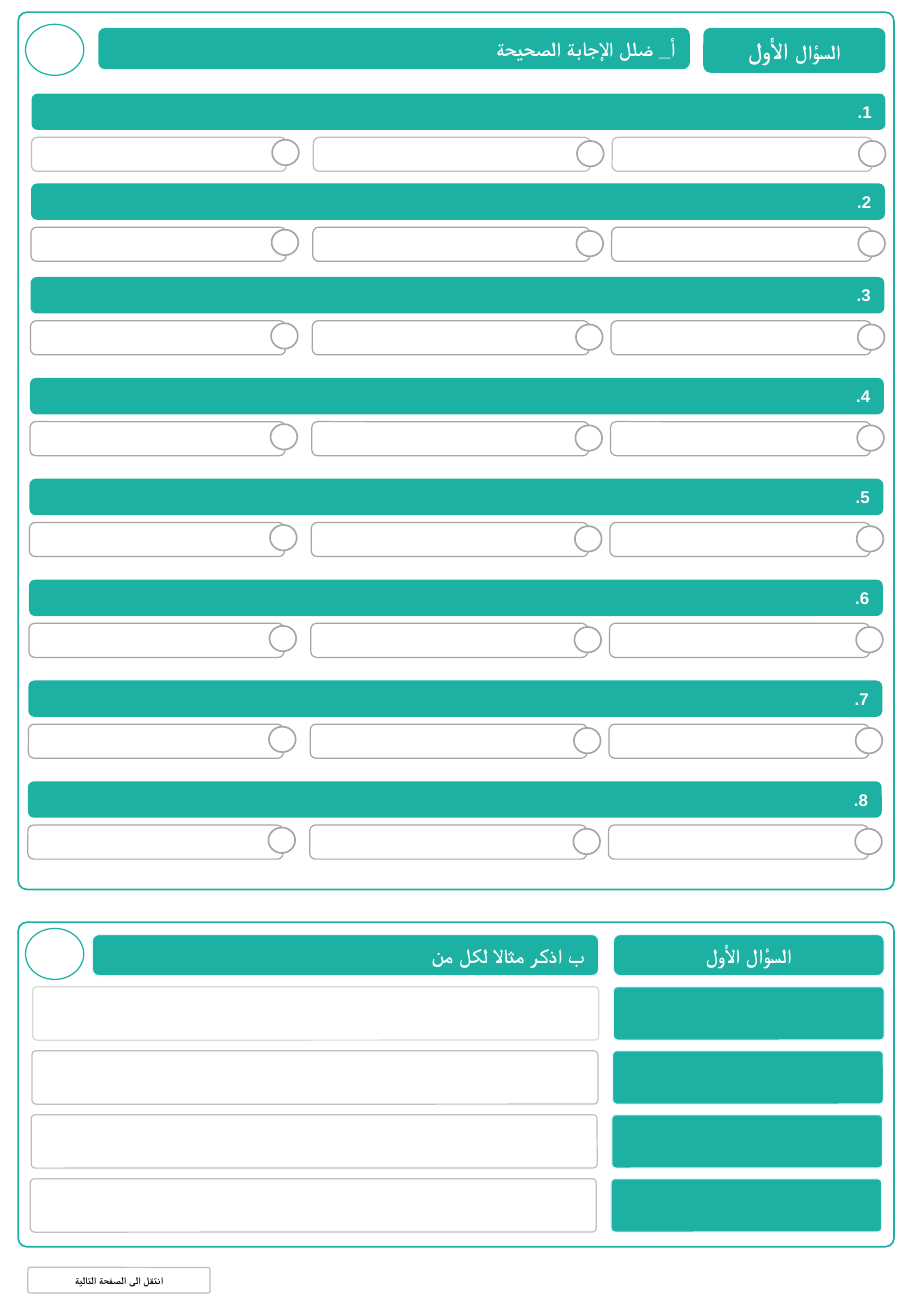
from lxml.etree import SubElement
from pptx import Presentation
from pptx.dml.color import RGBColor
from pptx.enum.shapes import MSO_SHAPE
from pptx.enum.text import MSO_AUTO_SIZE, PP_ALIGN
from pptx.oxml.ns import qn
from pptx.util import Inches, Pt

COLORS = {
    "teal": "1DB1A3",
    "white": "FFFFFF",
    "black": "000000",
    "ice": "E5F5FF",
    "pale": "D9D9D9",
    "silver": "BFBFBF",
    "gray": "A6A6A6",
}
FONT = "Roboto"
ARABIC_FONT = "Arial"
PANEL_LEFT, PANEL_WIDTH = 0.15, 7.21
QUESTION_TOPS = [0.77, 1.51] + [2.28 + 0.83 * step for step in range(6)]
# Offsets from the left edge of the question: box left, box width, bubble left, bubble top
OPTIONS = [(4.78, 2.14, 6.81, 0.39), (2.32, 2.28, 4.49, 0.39), (0, 2.1, 1.98, 0.38)]


def color(name):
    return RGBColor.from_string(COLORS[name])


def add_box(shapes, box, fill=None, line=None, width=0.75, alpha=None,
            radius=None, kind=MSO_SHAPE.ROUNDED_RECTANGLE):
    """Add a preset shape; box is left, top, width, height in inches."""
    shape = shapes.add_shape(kind, *(Inches(length) for length in box))
    shape.shadow.inherit = False
    if radius is not None:
        shape.adjustments[0] = radius
    if fill:
        shape.fill.solid()
        shape.fill.fore_color.rgb = color(fill)
        if alpha:
            fill_color = shape.fill._xPr.find(qn("a:solidFill"))[0]
            SubElement(fill_color, qn("a:alpha"), val=str(alpha * 1000))
    else:
        shape.fill.background()
    if line:
        shape.line.color.rgb = color(line)
        shape.line.width = Pt(width)
    else:
        shape.line.fill.background()
    return shape


def write(shape, parts, align=PP_ALIGN.RIGHT, ink="white"):
    """Write right-to-left bold text given as (text, size) parts."""
    frame = shape.text_frame
    frame.word_wrap = True
    frame.auto_size = MSO_AUTO_SIZE.SHAPE_TO_FIT_TEXT
    paragraph = frame.paragraphs[0]
    paragraph.alignment = align
    paragraph._p.get_or_add_pPr().set("rtl", "1")
    for text, size in parts:
        run = paragraph.add_run()
        run.text = text
        run.font.name = FONT
        run.font.size = Pt(size)
        run.font.bold = True
        run.font.color.rgb = color(ink)
        SubElement(run._r.get_or_add_rPr(), qn("a:cs"), typeface=ARABIC_FONT)


def add_panel(shapes, top, height, radius):
    """Add the outlined frame of a section and its oval for the mark."""
    add_box(shapes, (PANEL_LEFT, top, PANEL_WIDTH, height), line="teal", width=1, radius=radius)
    add_box(shapes, (PANEL_LEFT + 0.06, top + (0.1 if top < 1 else 0.05), 0.48, 0.42),
            line="teal", kind=MSO_SHAPE.OVAL)


def add_question(shapes, left, top, number):
    """Add a numbered question bar with its three answers to shade."""
    write(add_box(shapes, (left, top, 7.03, 0.3), "teal"), [(f"{number}.", 10)])
    style = dict(line="silver") if number == 1 else dict(fill="white", line="gray", alpha=30)
    for box_left, box_width, bubble_left, bubble_top in OPTIONS:
        add_box(shapes, (left + box_left, top + 0.36, box_width, 0.28), **style)
        add_box(shapes, (left + bubble_left, top + bubble_top, 0.22, 0.21), "white", "gray", 1,
                kind=MSO_SHAPE.FLOWCHART_CONNECTOR)


def add_choice_section(slide, top):
    add_panel(slide.shapes, top, 7.22, 0.01)
    title = add_box(slide.shapes, (5.79, top + 0.13, 1.5, 0.37), "teal")
    write(title, [("السؤال", 12), (" الأول", 14)], PP_ALIGN.CENTER)
    task = add_box(slide.shapes, (0.81, top + 0.13, 4.87, 0.34), "teal")
    write(task, [("أ_ ضلل الإجابة الصحيحة", 12)])
    for index, question_top in enumerate(QUESTION_TOPS):
        question = slide.shapes.add_group_shape()
        add_question(question.shapes, 0.26 - 0.03 * index / 7, question_top, index + 1)


def add_example_section(slide, top):
    add_panel(slide.shapes, top, 2.67, 0.026)
    title = add_box(slide.shapes, (5.05, top + 0.1, 2.23, 0.34), "teal", "ice")
    write(title, [("السؤال الأول", 12)], PP_ALIGN.CENTER)
    task = add_box(slide.shapes, (0.76, top + 0.1, 4.17, 0.34), "teal", "ice")
    write(task, [("ب اذكر مثالا لكل من", 12)])
    for index in range(4):
        row_top = top + 0.53 + 1.58 * index / 3
        drift = 0.02 * index / 3
        add_box(slide.shapes, (5.05 - drift, row_top, 2.23, 0.44), "teal", "ice", radius=0.08)
        add_box(slide.shapes, (0.27 - drift, row_top, 4.66, 0.44), "white",
                "silver" if index else "pale", alpha=30, radius=0.08)


def add_next_page_note(slide, left, top):
    note = add_box(slide.shapes, (left, top, 1.5, 0.21), "white", "silver", radius=0.08)
    write(note, [("انتقل الى الصفحة التالية", 6)], PP_ALIGN.CENTER, "black")


def main():
    presentation = Presentation()
    presentation.slide_width = Inches(7.5)
    presentation.slide_height = Inches(10.83)
    slide = presentation.slides.add_slide(presentation.slide_layouts[6])
    add_choice_section(slide, 0.1)
    add_example_section(slide, 7.59)
    add_next_page_note(slide, 0.23, 10.43)
    presentation.save("out.pptx")


if __name__ == "__main__":
    main()
